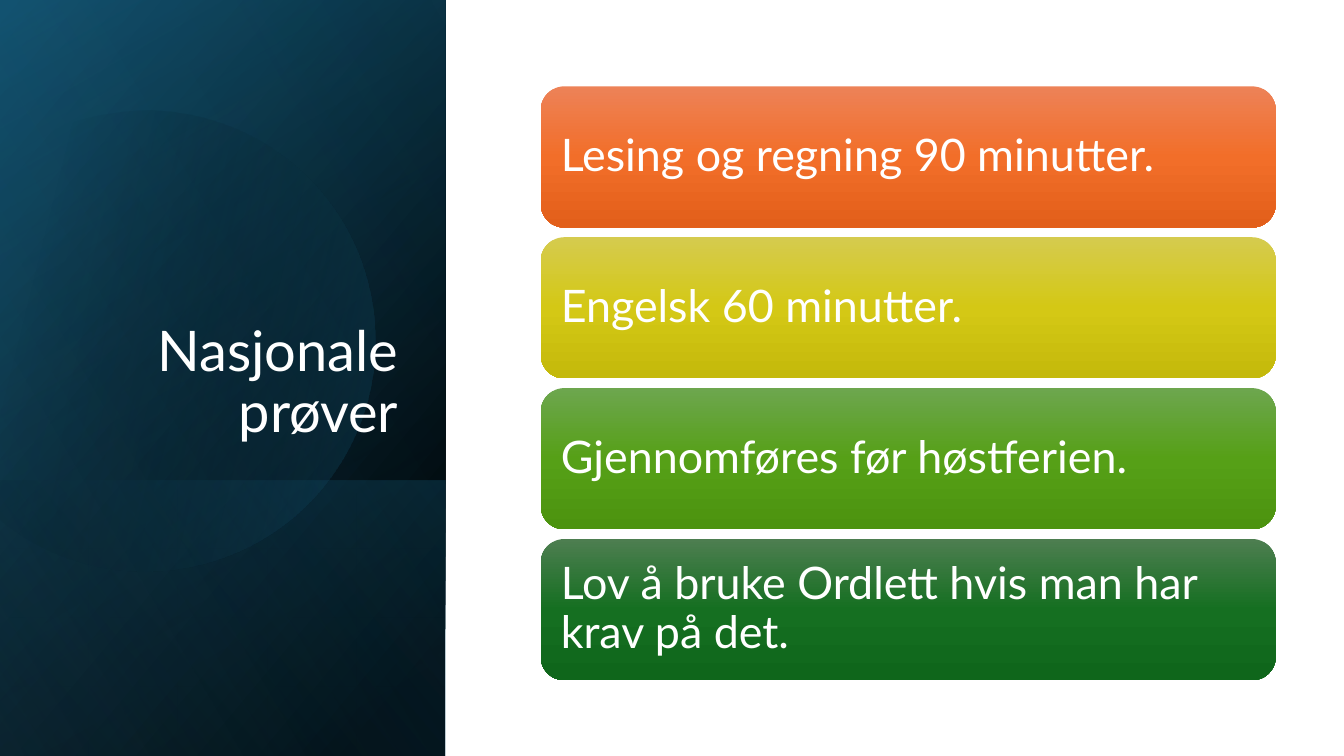
from dataclasses import dataclass
from math import cos, radians, sin

from lxml.etree import SubElement
from pptx import Presentation
from pptx.dml.color import RGBColor
from pptx.enum.shapes import MSO_SHAPE as Shape
from pptx.enum.text import MSO_ANCHOR as Anchor, MSO_AUTO_SIZE as AutoSize, PP_ALIGN as Align
from pptx.oxml.ns import qn
from pptx.util import Inches, Pt

# The slide is a grid of 100 columns by 100 rows
WIDTH, HEIGHT = Inches(13.33), Inches(7.5)
FONT = "Lato"
COLORS = {"white": "FFFFFF", "black": "000000", "navy": "104862",
          "teal": "156082", "sky": "46B1E1"}
PANEL_COLUMNS = 33.15
CARD_LEFT, CARD_TOP, CARD_COLUMNS, CARD_ROWS, CARD_PITCH = 40.24, 11.42, 54.68, 18.67, 19.96

Point = tuple[float, float]


@dataclass(frozen=True)
class Stop:
    position: int
    color: str
    opacity: int = 100


@dataclass(frozen=True)
class Layer:
    top: float
    angle: int
    stops: tuple[Stop, ...]


@dataclass(frozen=True)
class Card:
    text: str
    shades: tuple[str, str, str]


BASE = Layer(0, 50, (Stop(8, COLORS["black"]), Stop(100, COLORS["navy"])))
GLOW = Layer(0, 30, (Stop(0, COLORS["black"], 0), Stop(99, COLORS["teal"], 46)))
FOOT = Layer(63.5, 130, (Stop(2, COLORS["teal"], 29), Stop(100, COLORS["black"], 30)))
SHEEN = Layer(0, 120, (Stop(0, COLORS["black"], 0), Stop(99, COLORS["sky"], 11)))

# Disc outline in inches: three points make a curve, one point a straight edge
DISC_START: Point = (1.49, 1.1)
DISC_EDGES: tuple[tuple[Point, ...], ...] = (
    ((2.46, 1.12), (3.35, 1.77), (3.63, 2.75)),
    ((3.98, 3.97), (3.28, 5.23), (2.07, 5.58)),
    ((1.31, 5.8), (0.53, 5.61), (-0.03, 5.14)),
    ((-0.15, 5.03),),
    ((-0.15, 1.75),),
    ((0, 1.61),),
    ((0.23, 1.42), (0.5, 1.28), (0.8, 1.19)),
    ((1.03, 1.13), (1.26, 1.1), DISC_START),
)
DISC_CENTER: Point = (1.58, 3.35)
DISC_TURN = 343.9
DISC_STOPS = (Stop(29, COLORS["black"], 0), Stop(100, COLORS["teal"], 43))

CARDS = (
    Card("Lesing og regning 90 minutter.", ("ED8257", "F26E29", "E25F1A")),
    Card("Engelsk 60 minutter.", ("D5CB4E", "D4C815", "C4B90B")),
    Card("Gjennomføres før høstferien.", ("6DA64E", "56A017", "4C930F")),
    Card("Lov å bruke Ordlett hvis man har krav på det.", ("4D7E50", "156F21", "0F661B")),
)


def columns(count: float) -> int:
    return round(WIDTH * count / 100)


def rows(count: float) -> int:
    return round(HEIGHT * count / 100)


def paint(shape, angle: int, stops: tuple[Stop, ...]) -> None:
    """Fill with a gradient, without outline or shadow."""
    shape.line.fill.background()
    shape.shadow.inherit = False
    properties = shape.element.spPr
    gradient = SubElement(properties, qn("a:gradFill"), rotWithShape="1")
    properties.insert(2, gradient)
    stop_list = SubElement(gradient, qn("a:gsLst"))
    for stop in stops:
        entry = SubElement(stop_list, qn("a:gs"), pos=str(stop.position * 1000))
        color = SubElement(entry, qn("a:srgbClr"), val=stop.color)
        if stop.opacity < 100:
            SubElement(color, qn("a:alpha"), val=str(stop.opacity * 1000))
    SubElement(gradient, qn("a:lin"), ang=str(angle * 60000), scaled="0")


def style_text(frame, size: int, align: Align, anchor: Anchor) -> None:
    frame.word_wrap = True
    frame.auto_size = AutoSize.NONE
    frame.vertical_anchor = anchor
    para = frame.paragraphs[0]
    para.alignment = align
    para.line_spacing = 0.9
    para.font.name = FONT
    para.font.size = Pt(size)
    para.font.color.rgb = RGBColor.from_string(COLORS["white"])


def add_layer(page, layer: Layer) -> None:
    """Cover the panel from the layer's top down with a turned, mirrored rectangle."""
    across, down = columns(PANEL_COLUMNS), rows(100 - layer.top)
    left = (across - down) // 2
    top = rows(layer.top) + (down - across) // 2
    shape = page.shapes.add_shape(Shape.RECTANGLE, left, top, down, across)
    shape.rotation = 90
    shape.element.spPr.find(qn("a:xfrm")).set("flipH", "1")
    paint(shape, layer.angle, layer.stops)


def turn_back(point: Point) -> tuple[int, int]:
    """Undo the disc's rotation for one point of its outline."""
    angle = radians(-DISC_TURN)
    x, y = point[0] - DISC_CENTER[0], point[1] - DISC_CENTER[1]
    return (Inches(DISC_CENTER[0] + x * cos(angle) - y * sin(angle)),
            Inches(DISC_CENTER[1] + x * sin(angle) + y * cos(angle)))


def add_disc(page) -> None:
    """Draw a disc cut off by the left edge of the slide."""
    outline = page.shapes.build_freeform(*turn_back(DISC_START))
    outline.add_line_segments([turn_back(point) for edge in DISC_EDGES for point in edge])
    disc = outline.convert_to_shape()
    contour = next(disc.element.iter(qn("a:path")))
    segments = iter(contour.findall(qn("a:lnTo")))
    for edge in DISC_EDGES:
        first, *others = [next(segments) for _ in edge]
        if others:
            first.tag = qn("a:cubicBezTo")
        for other in others:
            first.extend(list(other))
            contour.remove(other)
    disc.rotation = DISC_TURN
    paint(disc, 30, DISC_STOPS)


def add_title(page, text: str) -> None:
    title = page.shapes.title
    title.left, title.top = columns(4.8), rows(24.53)
    title.width, title.height = columns(25.58), rows(34.93)
    title.text_frame.text = text
    style_text(title.text_frame, 40, Align.RIGHT, Anchor.BOTTOM)
    title.element.getparent().append(title.element)  # bring in front of the panel


def add_card(page, card: Card, index: int) -> None:
    box = page.shapes.add_shape(
        Shape.ROUNDED_RECTANGLE, columns(CARD_LEFT), rows(CARD_TOP + index * CARD_PITCH),
        columns(CARD_COLUMNS), rows(CARD_ROWS))
    paint(box, 90, tuple(Stop(50 * place, shade) for place, shade in enumerate(card.shades)))
    frame = box.text_frame
    frame.text = card.text
    frame.margin_left = frame.margin_right = Inches(0.13)
    frame.margin_top = frame.margin_bottom = Inches(0.13)
    style_text(frame, 32, Align.LEFT, Anchor.MIDDLE)


def main() -> None:
    deck = Presentation()
    deck.slide_width, deck.slide_height = WIDTH, HEIGHT
    page = deck.slides.add_slide(deck.slide_layouts.get_by_name("Title Only"))

    # Dark panel with its disc
    for layer in (BASE, GLOW, FOOT):
        add_layer(page, layer)
    add_disc(page)
    add_layer(page, SHEEN)
    add_title(page, "Nasjonale prøver")

    # Column of cards
    for index, card in enumerate(CARDS):
        add_card(page, card, index)

    deck.save("out.pptx")


if __name__ == "__main__":
    main()
